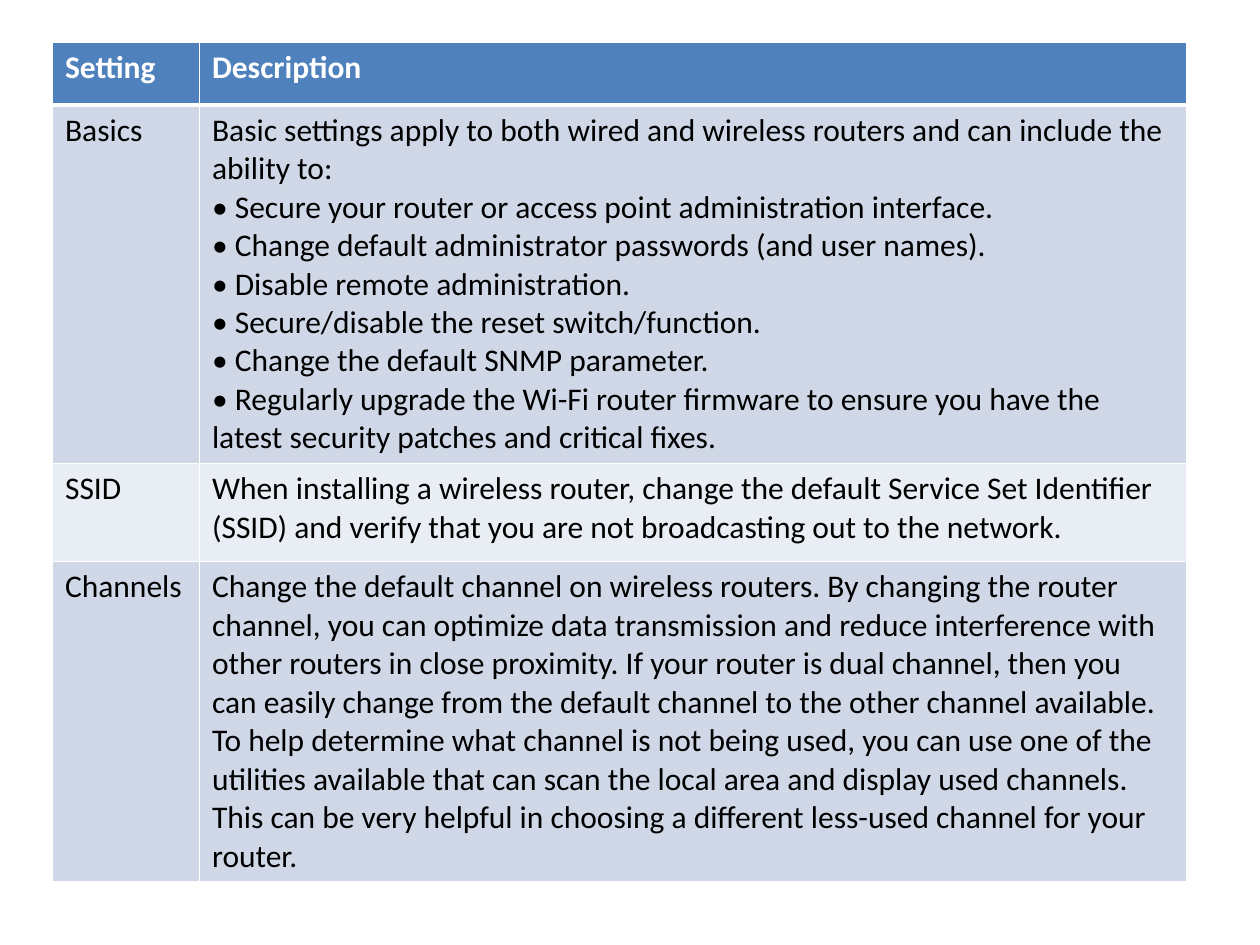
from lxml import etree
from pptx import Presentation
from pptx.dml.color import RGBColor
from pptx.oxml import ns
from pptx.util import Pt

HEAD = ("Setting", "Description")
ROWS = [
    ("Basics", [
        "Basic settings apply to both wired and wireless routers and can include the ability to:",
        "• Secure your router or access point administration interface.",
        "• Change default administrator passwords (and user names).",
        "• Disable remote administration.",
        "• Secure/disable the reset switch/function.",
        "• Change the default SNMP parameter.",
        "• Regularly upgrade the Wi-Fi router firmware to ensure you have the "
        "latest security patches and critical fixes.",
    ]),
    ("SSID", [
        "When installing a wireless router, change the default Service Set Identifier "
        "(SSID) and verify that you are not broadcasting out to the network.",
    ]),
    ("Channels", [
        "Change the default channel on wireless routers. By changing the router channel, "
        "you can optimize data transmission and reduce interference with other routers in "
        "close proximity. If your router is dual channel, then you can easily change from "
        "the default channel to the other channel available. To help determine what channel "
        "is not being used, you can use one of the utilities available that can scan the "
        "local area and display used channels. This can be very helpful in choosing a "
        "different less-used channel for your router.",
    ]),
]
LEFT, TOP, WIDTH, HEIGHT = 30, 24, 648, 474
COLS = (84, 564)
TALL = (36, 120, 56, 120)
BLUE, WHITE, BLACK = "4F81BD", "FFFFFF", "000000"
BANDS = ("D0D8E8", "E9EDF4")


def paint(fill, color):
    fill.solid()
    fill.fore_color.rgb = RGBColor.from_string(color)


def write(frame, lines, size=18, color=BLACK, bold=False, face="Calibri"):
    for i, line in enumerate(lines):
        para = frame.paragraphs[0] if i == 0 else frame.add_paragraph()
        run = para.add_run()
        run.text = line
        run.font.size = Pt(size)
        run.font.name = face
        run.font.bold = bold
        paint(run.font.fill, color)


def edge(cell, top=1, bottom=1):
    props = cell._tc.get_or_add_tcPr()
    sides = (("L", 1), ("R", 1), ("T", top), ("B", bottom))
    for i, (side, width) in enumerate(sides):
        line = etree.Element(ns.qn("a:ln" + side), w=str(Pt(width)))
        fill = etree.SubElement(line, ns.qn("a:solidFill"))
        etree.SubElement(fill, ns.qn("a:srgbClr"), val=WHITE)
        props.insert(i, line)


def main():
    deck = Presentation()
    deck.slide_width, deck.slide_height = Pt(720), Pt(540)
    slide = deck.slides.add_slide(deck.slide_layouts[6])
    frame = slide.shapes.add_table(
        len(TALL), len(COLS), Pt(LEFT), Pt(TOP), Pt(WIDTH), Pt(HEIGHT))
    table = frame.table
    for col, width in zip(table.columns, COLS):
        col.width = Pt(width)
    for row, height in zip(table.rows, TALL):
        row.height = Pt(height)
    frame.height = Pt(HEIGHT)

    body = [([name], lines) for name, lines in ROWS]
    for r, row in enumerate([[[word] for word in HEAD]] + body):
        head = r == 0
        for c, lines in enumerate(row):
            cell = table.cell(r, c)
            paint(cell.fill, BLUE if head else BANDS[(r - 1) % 2])
            edge(cell, top=3 if r == 1 else 1, bottom=3 if head else 1)
            write(cell.text_frame, lines, color=WHITE if head else BLACK, bold=head)
    deck.save("out.pptx")


if __name__ == "__main__":
    main()
